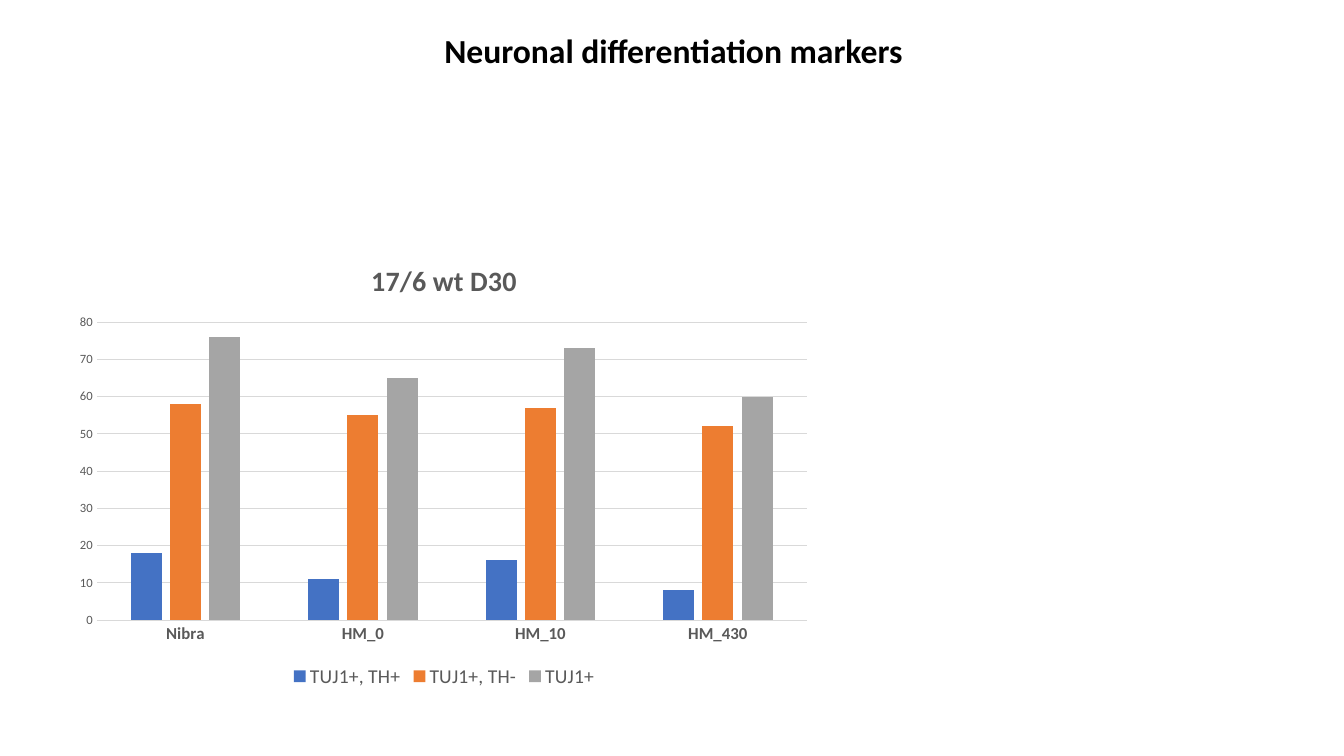
import dataclasses

import lxml.etree
import pptx
import pptx.chart.data
import pptx.dml.color
import pptx.enum.chart
import pptx.enum.text
import pptx.oxml.ns
import pptx.util

Inches = pptx.util.Inches
Color = pptx.dml.color.RGBColor.from_string


@dataclasses.dataclass(frozen=True)
class Theme:
    font: str = "Calibri"
    ink: str = "000000"
    muted: str = "595959"
    rule: str = "D9D9D9"
    series: tuple = ("4472C4", "ED7D31", "A5A5A5")
    heading: int = 24
    chart_title: int = 20
    legend: int = 14
    categories: int = 12
    chart: int = 10
    values: int = 9


class MarkerSlide:
    def __init__(self, presentation, theme):
        self.theme = theme
        self.slide = presentation.slides.add_slide(presentation.slide_layouts[5])

    def style(self, font, size, color, bold=False):
        font.name = self.theme.font
        font.size = pptx.util.Pt(size)
        font.bold = bold
        font.color.rgb = Color(color)

    def rule(self, line):
        line.color.rgb = Color(self.theme.rule)
        line.width = pptx.util.Pt(0.75)

    def heading(self, text, left, top, width, height):
        title = self.slide.shapes.title
        title.left, title.top = Inches(left), Inches(top)
        title.width, title.height = Inches(width), Inches(height)
        frame = title.text_frame
        frame.text = text
        frame.word_wrap = True
        frame.auto_size = pptx.enum.text.MSO_AUTO_SIZE.SHAPE_TO_FIT_TEXT
        frame.vertical_anchor = pptx.enum.text.MSO_ANCHOR.TOP
        paragraph = frame.paragraphs[0]
        paragraph.alignment = pptx.enum.text.PP_ALIGN.CENTER
        self.style(paragraph.font, self.theme.heading, self.theme.ink, True)

    def column_chart(self, title, categories, series, left, top, width, height):
        theme = self.theme
        chart_data = pptx.chart.data.CategoryChartData()
        chart_data.categories = categories
        for name, percentages in series.items():
            chart_data.add_series(name, percentages)
        chart = self.slide.shapes.add_chart(
            pptx.enum.chart.XL_CHART_TYPE.COLUMN_CLUSTERED,
            Inches(left), Inches(top), Inches(width), Inches(height), chart_data,
        ).chart
        self.style(chart.font, theme.chart, theme.ink)

        chart.has_title = True
        chart.chart_title.text_frame.text = title
        self.style(chart.chart_title.text_frame.paragraphs[0].font,
                   theme.chart_title, theme.muted, True)
        chart.has_legend = True
        chart.legend.position = pptx.enum.chart.XL_LEGEND_POSITION.BOTTOM
        chart.legend.include_in_layout = False
        self.style(chart.legend.font, theme.legend, theme.muted)

        plot = chart.plots[0]
        plot.gap_width = 219
        plot.overlap = -27
        plot.vary_by_categories = False
        for columns, color in zip(plot.series, theme.series):
            columns.format.fill.solid()
            columns.format.fill.fore_color.rgb = Color(color)

        for axis in (chart.category_axis, chart.value_axis):
            axis.major_tick_mark = pptx.enum.chart.XL_TICK_MARK.NONE
            axis.minor_tick_mark = pptx.enum.chart.XL_TICK_MARK.NONE
        self.style(chart.category_axis.tick_labels.font, theme.categories, theme.muted, True)
        self.rule(chart.category_axis.format.line)
        scale = chart.value_axis
        scale.minimum_scale, scale.maximum_scale, scale.major_unit = 0, 80, 10
        scale.format.line.fill.background()
        self.style(scale.tick_labels.font, theme.values, theme.muted)
        self.rule(scale.major_gridlines.format.line)
        return chart

    def place_plot(self, chart, x, y, w, h):
        qn = pptx.oxml.ns.qn
        plot_area = chart.element.find(".//" + qn("c:plotArea"))
        for layout in plot_area.findall(qn("c:layout")):
            plot_area.remove(layout)
        layout = lxml.etree.Element(qn("c:layout"))
        manual = lxml.etree.SubElement(layout, qn("c:manualLayout"))
        settings = {"layoutTarget": "inner", "xMode": "edge", "yMode": "edge",
                    "x": x, "y": y, "w": w, "h": h}
        for tag, setting in settings.items():
            lxml.etree.SubElement(manual, qn("c:" + tag)).set("val", str(setting))
        plot_area.insert(0, layout)


def main():
    presentation = pptx.Presentation()
    presentation.slide_width = Inches(13.33)
    presentation.slide_height = Inches(7.5)
    markers = MarkerSlide(presentation, Theme())
    markers.heading("Neuronal differentiation markers", 1.37, 0.25, 10.62, 0.5)
    day_30 = markers.column_chart(
        "17/6 wt D30",
        ("Nibra", "HM_0", "HM_10", "HM_430"),
        {
            "TUJ1+, TH+": (18, 11, 16, 8),
            "TUJ1+, TH-": (58, 55, 57, 52),
            "TUJ1+": (76, 65, 73, 60),
        },
        0.66, 2.39, 7.49, 4.48,
    )
    markers.place_plot(day_30, 0.04, 0.18, 0.94, 0.66)
    presentation.save("out.pptx")


if __name__ == "__main__":
    main()
